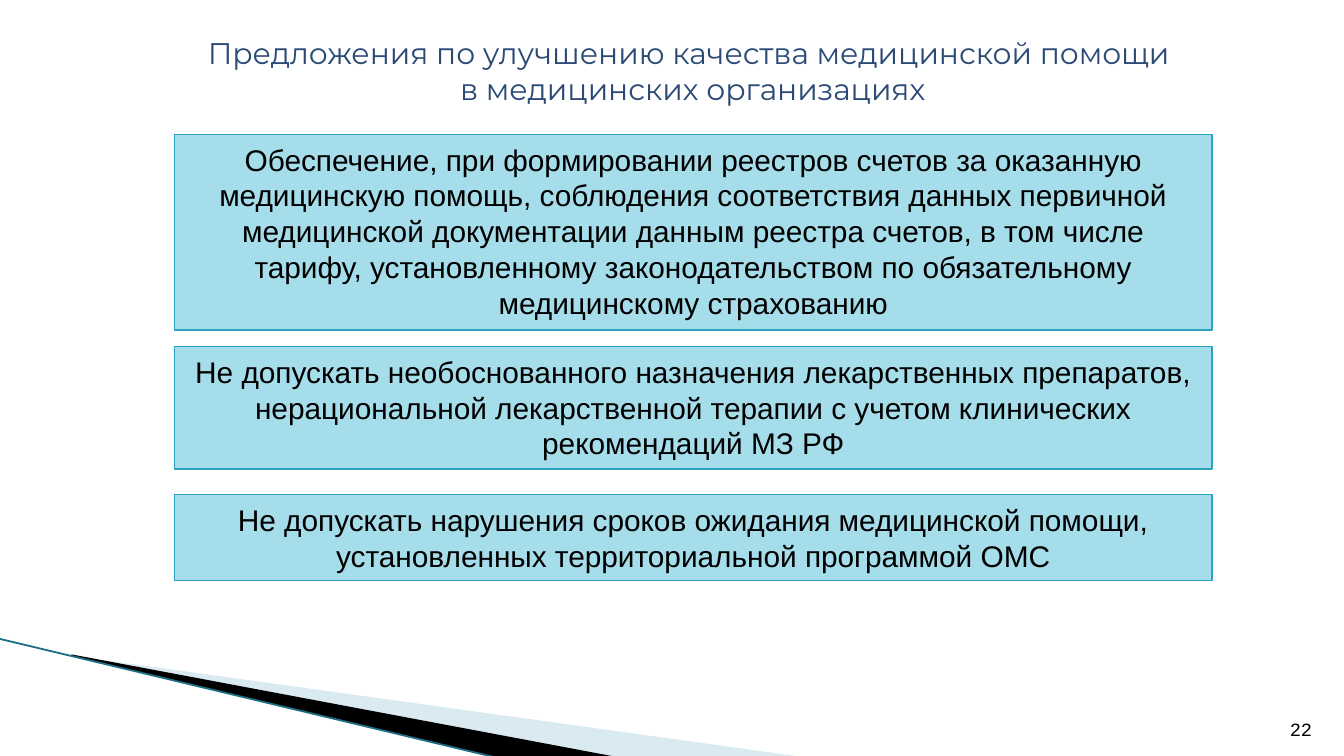
from lxml.etree import SubElement
from pptx import Presentation
from pptx.dml.color import RGBColor
from pptx.enum.shapes import MSO_CONNECTOR, MSO_SHAPE
from pptx.enum.text import MSO_ANCHOR, MSO_AUTO_SIZE, PP_ALIGN
from pptx.oxml.ns import qn
from pptx.util import Cm, Pt

TITLE = [
    "Предложения по улучшению качества медицинской помощи ",
    "в медицинских организациях",
]
# top (cm), number of text lines, text
PROPOSALS = [
    (2.54, 5, "Обеспечение, при формировании реестров счетов за оказанную "
              "медицинскую помощь, соблюдения соответствия данных первичной "
              "медицинской документации данным реестра счетов, в том числе "
              "тарифу, установленному законодательством по обязательному "
              "медицинскому страхованию"),
    (6.55, 3, "Не допускать необоснованного назначения лекарственных препаратов, "
              "нерациональной лекарственной терапии с учетом клинических "
              "рекомендаций МЗ РФ"),
    (9.35, 2, "Не допускать нарушения сроков ожидания медицинской помощи, "
              "установленных территориальной программой ОМС"),
]
PAGE_NUMBER = "22"

THEME = {
    "title": ("Montserrat", 16, "2B4A76"),
    "body": ("Arial", 16, "000000"),
    "number": ("Courier New", 10, "000000"),
    "box_fill": "A6DDEA",
    "box_line": "2DA2BF",
    "pale_wedge": "A0CBDC",
    "dark_wedge": "000000",
    "corner_line": "1B6F85",
}

# Corner decoration, points in cm
PALE_WEDGE = [(1.4, 12.4), (15.11, 14.3), (11.58, 14.3)]
DARK_WEDGE = [(1.35, 12.37), (11.61, 14.3), (9.45, 14.33), (1.37, 12.4)]
CORNER_LINE = [(-0.03, 12.07), (9.42, 14.33)]

BOX_LEFT, BOX_WIDTH = 3.3, 19.61
BOX_PADDING, LINE_HEIGHT = 0.25, 0.69


def color(name):
    return RGBColor.from_string(name)


def write(shape, paragraphs, style, alignment, anchor=MSO_ANCHOR.TOP):
    font_name, size, font_color = THEME[style]
    frame = shape.text_frame
    frame.word_wrap = True
    frame.auto_size = MSO_AUTO_SIZE.NONE
    frame.vertical_anchor = anchor
    frame.margin_left = frame.margin_right = Cm(0.25)
    frame.margin_top = frame.margin_bottom = Cm(0.13)
    for index, text in enumerate(paragraphs):
        paragraph = frame.paragraphs[0] if index == 0 else frame.add_paragraph()
        paragraph.alignment = alignment
        paragraph.line_spacing = 1.0
        run = paragraph.add_run()
        run.text = text
        run.font.name = font_name
        run.font.size = Pt(size)
        run.font.color.rgb = color(font_color)


def add_wedge(slide, points, fill, opacity=100):
    corners = [(Cm(x), Cm(y)) for x, y in points]
    builder = slide.shapes.build_freeform(*corners[0])
    builder.add_line_segments(corners[1:], close=True)
    wedge = builder.convert_to_shape()
    wedge.shadow.inherit = False
    wedge.fill.solid()
    wedge.fill.fore_color.rgb = color(fill)
    wedge.line.fill.background()
    if opacity < 100:
        fill_color = wedge._element.spPr.find(qn("a:solidFill"))[0]
        SubElement(fill_color, qn("a:alpha")).set("val", str(opacity * 1000))


def add_corner(slide):
    add_wedge(slide, PALE_WEDGE, THEME["pale_wedge"], opacity=40)
    add_wedge(slide, DARK_WEDGE, THEME["dark_wedge"])
    ends = [Cm(value) for point in CORNER_LINE for value in point]
    connector = slide.shapes.add_connector(MSO_CONNECTOR.STRAIGHT, *ends)
    connector.line.color.rgb = color(THEME["corner_line"])
    connector.line.width = Pt(0.95)
    SubElement(connector._element.spPr, qn("a:effectLst"))


def add_proposal(slide, top, line_count, text):
    height = BOX_PADDING + LINE_HEIGHT * line_count
    box = slide.shapes.add_shape(
        MSO_SHAPE.RECTANGLE, Cm(BOX_LEFT), Cm(top), Cm(BOX_WIDTH), Cm(height))
    box.shadow.inherit = False
    box.fill.solid()
    box.fill.fore_color.rgb = color(THEME["box_fill"])
    box.line.color.rgb = color(THEME["box_line"])
    box.line.width = Pt(0.75)
    write(box, [text], "body", PP_ALIGN.CENTER)


def main():
    presentation = Presentation()
    presentation.slide_width = Cm(25.4)
    presentation.slide_height = Cm(14.29)
    slide = presentation.slides.add_slide(presentation.slide_layouts[5])

    add_corner(slide)

    title = slide.shapes.title
    title.left, title.top = Cm(2.49), Cm(0.53)
    title.width, title.height = Cm(21.21), Cm(1.63)
    write(title, TITLE, "title", PP_ALIGN.CENTER)

    for top, line_count, text in PROPOSALS:
        add_proposal(slide, top, line_count, text)

    number = slide.shapes.add_textbox(Cm(24.03), Cm(13.36), Cm(1.02), Cm(0.76))
    write(number, [PAGE_NUMBER], "number", PP_ALIGN.RIGHT, MSO_ANCHOR.BOTTOM)

    presentation.save("out.pptx")


if __name__ == "__main__":
    main()
